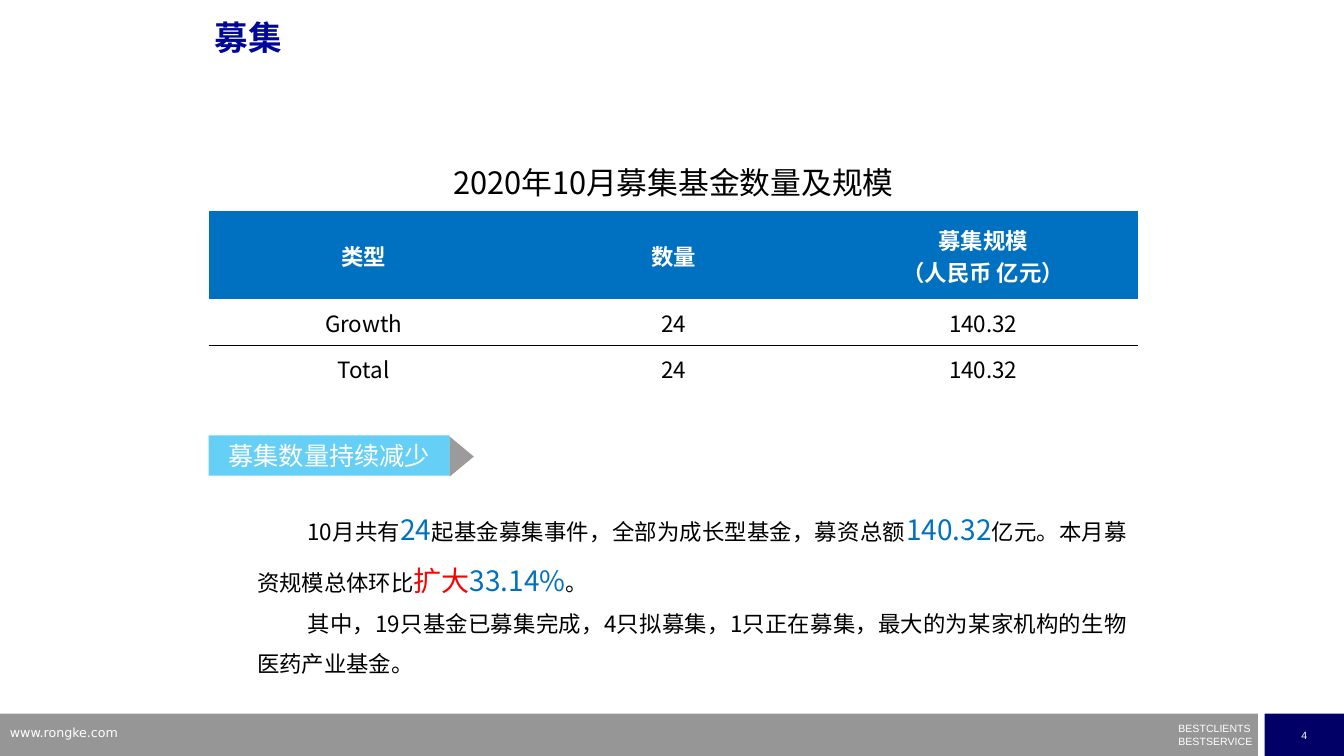
from lxml import etree
from pptx import Presentation
from pptx import util as u
from pptx.dml.color import RGBColor
from pptx.enum import shapes, text
from pptx.oxml import ns

HUES = {"white": "FFFFFF", "black": "000000", "gray": "969696", "night": "000066",
        "navy": "000798", "blue": "0070C0", "red": "FF0000", "sky": "00B0F0", "dark": "595959"}
NOTO, ARIAL, DEJA = "Noto Sans CJK SC", "Arial", "DejaVu Sans"
PLAIN = "{2D5ABB26-0587-4C30-8999-92F81FD0307C}"
LEFT, MID, JUST = text.PP_ALIGN.LEFT, text.PP_ALIGN.CENTER, text.PP_ALIGN.JUSTIFY
TOP, HALF = text.MSO_ANCHOR.TOP, text.MSO_ANCHOR.MIDDLE


class Deck:
    """Hold the style and the current slide; places are percent shares of its size."""

    def __init__(self):
        self.prs = Presentation()
        self.prs.slide_width, self.prs.slide_height = u.Inches(13.33), u.Inches(7.5)
        self.slide = self.prs.slides.add_slide(self.prs.slide_layouts[1])

    def box(self, x, y, w, h):
        wide, high = self.prs.slide_width / 100, self.prs.slide_height / 100
        return [round(n) for n in (x * wide, y * high, w * wide, h * high)]

    def hue(self, name):
        return RGBColor.from_string(HUES[name])

    def node(self, home, tag, **atts):
        return etree.SubElement(home, ns.qn(tag), **atts)

    def run(self, para, words, size, hue="black", face=NOTO, bold=False):
        run = para.add_run()
        run.text = words
        font = run.font
        font.size, font.name, font.bold = u.Pt(size), face, bold
        font.color.rgb = self.hue(hue)
        self.node(run.font._element, "a:ea", typeface=NOTO)

    def fill(self, frame, paras, align=LEFT, anchor=TOP, line=None, gap=0, dent=None, wrap=True):
        frame.word_wrap, frame.vertical_anchor = wrap, anchor
        for i, runs in enumerate(paras):
            para = frame.add_paragraph() if i else frame.paragraphs[0]
            para.alignment = align
            para.space_before = u.Pt(gap if i else 0)
            if line:
                para.line_spacing = line
            if dent is not None:
                props = para._p.get_or_add_pPr()
                props.set("marL", "0")
                props.set("indent", str(u.Inches(dent)))
                self.node(props, "a:buNone")
            for bit in runs:
                self.run(para, *bit)

    def holder(self, index, place, paras, **style):
        item = self.slide.placeholders[index]
        item.left, item.top, item.width, item.height = self.box(*place)
        item.text_frame.auto_size = text.MSO_AUTO_SIZE.NONE
        self.fill(item.text_frame, paras, **style)

    def label(self, place, paras, inset=None, **style):
        frame = self.slide.shapes.add_textbox(*self.box(*place)).text_frame
        if inset is not None:
            frame.margin_left = frame.margin_right = u.Inches(inset)
            frame.margin_top = frame.margin_bottom = u.Inches(inset)
        self.fill(frame, paras, **style)

    def block(self, place, hue, paras=(), kind="RECTANGLE", home=None, alpha=None, turn=0, wrap=True):
        home = home or self.slide
        item = home.shapes.add_shape(shapes.MSO_SHAPE[kind], *self.box(*place))
        item.shadow.inherit = False
        item.rotation = turn
        item.fill.solid()
        item.fill.fore_color.rgb = self.hue(hue)
        item.line.fill.background()
        if alpha:
            tint = item._element.spPr.find(".//" + ns.qn("a:srgbClr"))
            self.node(tint, "a:alpha", val=str(alpha * 1000))
        self.fill(item.text_frame, paras, align=MID, anchor=HALF, wrap=wrap)

    def group(self):
        return self.slide.shapes.add_group_shape()

    def rule(self, cell, side):
        props = cell._tc.get_or_add_tcPr()
        edge = etree.Element(ns.qn("a:" + side), w=str(u.Pt(1)))
        self.node(self.node(edge, "a:solidFill"), "a:srgbClr", val=HUES["black"])
        props.insert(0, edge)

    def cell(self, cell, words, size, hue, bold, back):
        cell.margin_left = cell.margin_right = cell.margin_top = u.Inches(0.01)
        cell.margin_bottom = 0
        cell.vertical_anchor = HALF
        if back:
            cell.fill.solid()
            cell.fill.fore_color.rgb = self.hue(back)
        else:
            cell.fill.background()
        para = cell.text_frame.paragraphs[0]
        para.alignment = MID
        for i, part in enumerate(words.split("\n")):
            if i:
                para.add_line_break()
            self.run(para, part, size, hue, NOTO, bold)

    def table(self, place, head, rows, highs):
        grid = self.slide.shapes.add_table(len(rows) + 1, len(rows[0]), *self.box(*place)).table
        grid.first_row = grid.horz_banding = False
        grid._tbl.tblPr.find(ns.qn("a:tableStyleId")).text = PLAIN
        for row, high in zip(grid.rows, highs):
            row.height = self.box(0, 0, 0, high)[3]
        grid.cell(0, 0).merge(grid.cell(0, len(rows[0]) - 1))
        self.cell(grid.cell(0, 0), head, 22, "black", False, None)
        for r, row in enumerate(rows, 1):
            look = ("white", True, "blue") if r == 1 else ("black", False, None)
            for c, words in enumerate(row):
                cell = grid.cell(r, c)
                self.cell(cell, words, 16, *look)
                if r > 1:
                    self.rule(cell, "lnB" if r == 2 else "lnT")


def main():
    deck = Deck()
    deck.block((0, 94.4, 93.6, 5.6), "gray")
    deck.block((94.1, 94.4, 5.9, 5.6), "night", [[("4", 7.5, "white", ARIAL)]], wrap=False)
    deck.label((87.68, 96.27, 5.7, 2.67),
               [[(word, 7.5, "white", ARIAL)] for word in ("BESTCLIENTS", "BESTSERVICE")],
               inset=0, line=0.5, gap=4.3)
    deck.label((0, 95.2, 24, 3.47), [[("www.rongke.com", 9, "white", DEJA)]])

    deck.holder(0, (15.23, 2.13, 67.5, 9.33), [[("募集", 24, "navy", ARIAL, True)]], line=0.9)
    deck.holder(1, (18.38, 64.93, 66.23, 24.93), [
        [("10月共有", 16), ("24", 20, "blue"),
         ("起基金募集事件，全部为成长型基金，募资总额", 16), ("140.32", 20, "blue"),
         ("亿元。本月募资规模总体环比", 16), ("扩大", 20, "red"),
         ("33.14%", 20, "blue"), ("。", 16)],
        [("其中，19只基金已募集完成，4只拟募集，1只正在募集，最大的为某家机构的生物医药产业基金。", 16)],
    ], align=JUST, line=1.5, dent=0.5)

    tag = deck.group()
    deck.block((15.53, 57.6, 17.93, 5.33), "sky", [[("募集数量持续减少", 18, "white")]],
               home=tag, alpha=60)
    deck.block((32.85, 58.8, 3, 3.2), "dark", kind="ISOSCELES_TRIANGLE",
               home=tag, alpha=60, turn=90)

    deck.table((15.53, 20, 69.15, 31.6), "2020年10月募集基金数量及规模", [
        ("类型", "数量", "募集规模\n（人民币 亿元）"),
        ("Growth", "24", "140.32"),
        ("Total", "24", "140.32"),
    ], (7.87, 11.73, 6.13, 5.87))
    deck.prs.save("out.pptx")


if __name__ == "__main__":
    main()
